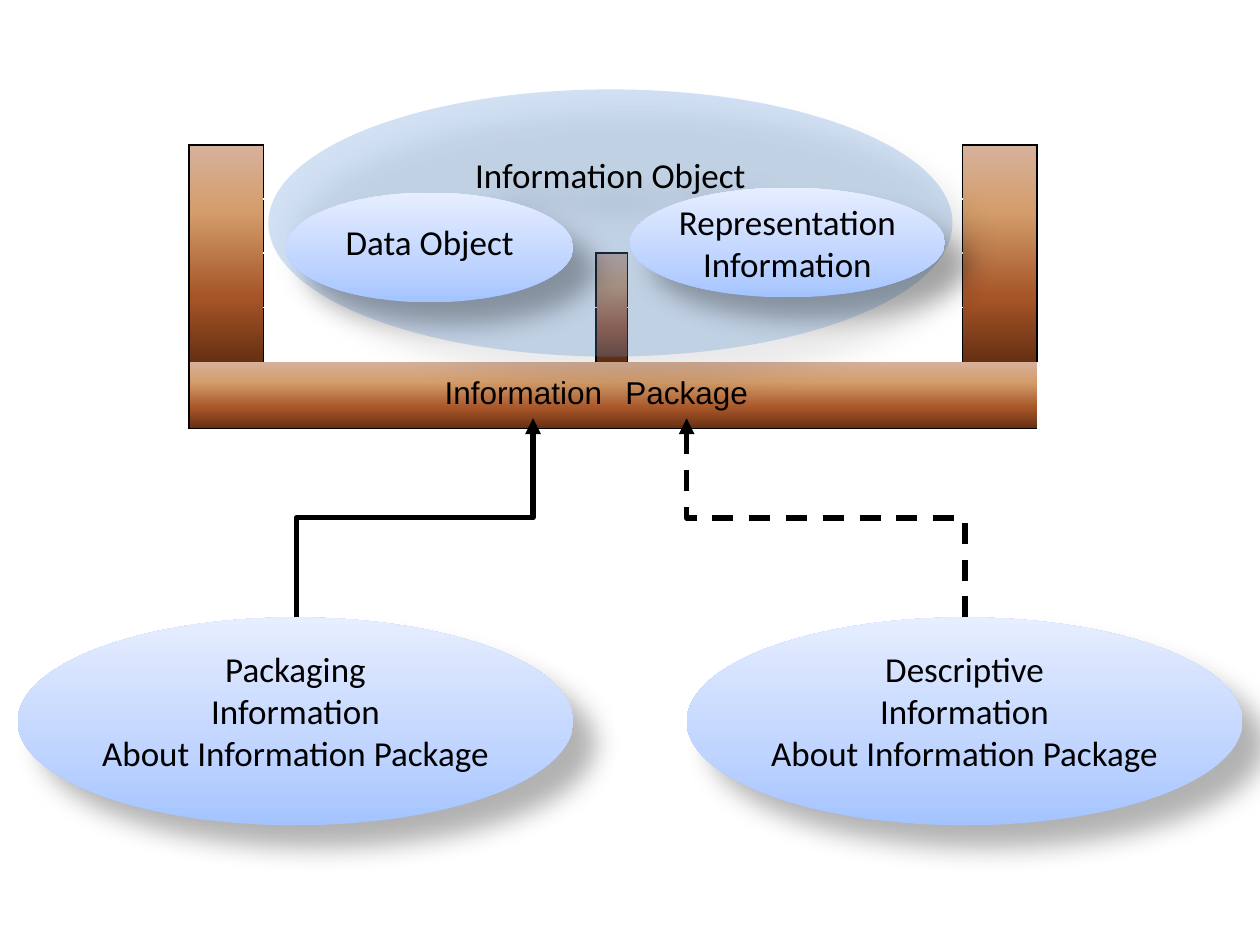
from lxml import etree
from pptx import Presentation
from pptx.dml.color import RGBColor
from pptx.enum.dml import MSO_LINE
from pptx.enum.shapes import MSO_CONNECTOR, MSO_SHAPE
from pptx.enum.text import MSO_ANCHOR, PP_ALIGN
from pptx.oxml.ns import qn
from pptx.util import Inches, Pt

CENTER, LEFT = PP_ALIGN.CENTER, PP_ALIGN.LEFT
TOP, MIDDLE = MSO_ANCHOR.TOP, MSO_ANCHOR.MIDDLE
OVAL, ELBOW, DASH = MSO_SHAPE.OVAL, MSO_CONNECTOR.ELBOW, MSO_LINE.DASH

BLACK = RGBColor(0x00, 0x00, 0x00)
WHITE = RGBColor(0xFF, 0xFF, 0xFF)
HAZE = RGBColor(0x55, 0x8E, 0xD5)
WOOD = [(0, RGBColor(0xD6, 0xB1, 0x9C)), (30, RGBColor(0xD4, 0x9E, 0x6C)),
        (70, RGBColor(0xA6, 0x55, 0x28)), (100, RGBColor(0x66, 0x30, 0x12))]
SKY = [(0, RGBColor(0xA4, 0xC4, 0xFF)), (35, RGBColor(0xBF, 0xD4, 0xFF)),
       (100, RGBColor(0xE6, 0xEE, 0xFF))]
NO_STYLE = "{2D5ABB26-0587-4C30-8999-92F81FD0307C}"

# Shelf: a grid whose wooden parts are (first row, first column, last row, last column)
SHELF_AT = (1.5, 1.15)
COLUMNS = [0.59, 1.31, 1.33, 0.25, 1.28, 1.38, 0.59]
ROWS = [0.43] * 4 + [0.53]
BASE_ROW = len(ROWS) - 1
WOODEN_PARTS = [(0, 0, 3, 0), (0, 6, 3, 6), (2, 3, 3, 3), (BASE_ROW, 0, BASE_ROW, 6)]
SIDES = {"a:lnL": (0, -1), "a:lnR": (0, 1), "a:lnT": (-1, 0), "a:lnB": (1, 0)}

# lines, (left, top, width, height), anchor, top inset, bottom inset
OUTER = (["Information Object"], (2.13, 0.71, 5.43, 2.12), TOP, 0.2, 0)
ABOUT = ["Information", "About Information Package"]
BUBBLES = [
    (["Data Object"], (2.27, 1.53, 2.28, 0.87), MIDDLE, 0, 0.1),
    (["Representation", "Information"], (5, 1.49, 2.5, 0.87), MIDDLE, 0, 0),
    (["Descriptive"] + ABOUT, (5.45, 4.9, 4.41, 1.65), TOP, 0, 0),
    (["Packaging"] + ABOUT, (0.14, 4.9, 4.41, 1.65), TOP, 0, 0),
]
SHELF_LABELS = [("Information", (3.43, 2.91, 1.59, 0.4), LEFT),
                ("Package", (4.72, 2.91, 1.46, 0.4), CENTER)]
# start, end, dash
ARROWS = [((2.35, 4.9), (4.23, 3.32), None), ((7.66, 4.9), (5.45, 3.32), DASH)]


def add_node(parent, tag, **attributes):
    node = etree.SubElement(parent, qn(tag))
    for name, value in attributes.items():
        node.set(name, str(value))
    return node


def add_color(parent, color, opacity=100):
    node = add_node(parent, "a:srgbClr", val=color)
    if opacity < 100:
        add_node(node, "a:alpha", val=opacity * 1000)


def paint_gradient(fill, element, stops, angle):
    fill.gradient()
    gradient = element.find(".//" + qn("a:gradFill"))
    for child in list(gradient):
        gradient.remove(child)
    stop_list = add_node(gradient, "a:gsLst")
    for position, color in stops:
        add_color(add_node(stop_list, "a:gs", pos=position * 1000), color)
    add_node(gradient, "a:lin", ang=angle * 60000, scaled=0)


def write(frame, lines, size, font, align):
    frame.text = "\n".join(lines)
    for para in frame.paragraphs:
        para.alignment = align
        para.font.size = Pt(size)
        for span in para.runs:
            span.font.size, span.font.name = Pt(size), font
            span.font.color.rgb = BLACK


def add_shelf(slide):
    row_count, column_count = len(ROWS), len(COLUMNS)
    frame = slide.shapes.add_table(row_count, column_count, *map(Inches, SHELF_AT),
                                   Inches(sum(COLUMNS)), Inches(sum(ROWS)))
    table = frame.table
    table.first_row = table.horz_banding = False
    frame.element.find(".//" + qn("a:tableStyleId")).text = NO_STYLE
    for column, width in zip(table.columns, COLUMNS):
        column.width = Inches(width)
    for row, height in zip(table.rows, ROWS):
        row.height = Inches(height)

    wooden = {(row, column) for top, left, bottom, right in WOODEN_PARTS
              for row in range(top, bottom + 1) for column in range(left, right + 1)}
    for row in range(row_count):
        for column in range(column_count):
            cell = table.cell(row, column)
            properties = cell._tc.get_or_add_tcPr()
            is_wood = (row, column) in wooden
            for side, (down, across) in SIDES.items():
                beside_wood = (row + down, column + across) in wooden
                edge = add_node(properties, side, w=Pt(1))
                if is_wood and (beside_wood or (row == BASE_ROW and side == "a:lnT")):
                    add_node(edge, "a:noFill")
                else:
                    color = BLACK if is_wood or beside_wood else WHITE
                    add_color(add_node(edge, "a:solidFill"), color)
            if is_wood:
                paint_gradient(cell.fill, properties, WOOD, 90)
            else:
                cell.fill.background()
    for top, left, bottom, right in WOODEN_PARTS:
        table.cell(top, left).merge(table.cell(bottom, right))


def add_bubble(slide, lines, place, anchor, inset_top, inset_bottom):
    bubble = slide.shapes.add_shape(OVAL, *map(Inches, place))
    bubble.line.fill.background()
    bubble.shadow.inherit = False
    effects = bubble.element.spPr.find(qn("a:effectLst"))
    shadow = add_node(effects, "a:outerShdw", blurRad=Pt(15), dist=Pt(18),
                      dir=45 * 60000, algn="tl", rotWithShape=0)
    add_color(shadow, BLACK, 30)
    frame = bubble.text_frame
    frame.word_wrap = True
    frame.vertical_anchor = anchor
    frame.margin_left = frame.margin_right = 0
    frame.margin_top, frame.margin_bottom = Inches(inset_top), Inches(inset_bottom)
    write(frame, lines, 20, "Calibri", CENTER)
    return bubble


def add_rising_arrow(slide, start, end, dash):
    """Elbow arrow that leaves upwards: a level elbow turned by 90 degrees."""
    middle_x, middle_y = (start[0] + end[0]) / 2, (start[1] + end[1]) / 2
    half_run, half_rise = (end[0] - start[0]) / 2, (start[1] - end[1]) / 2
    arrow = slide.shapes.add_connector(
        ELBOW, Inches(middle_x + half_rise), Inches(middle_y + half_run),
        Inches(middle_x - half_rise), Inches(middle_y - half_run))
    properties = arrow.element.spPr
    properties.find(qn("a:xfrm")).set("rot", str(90 * 60000))
    arrow.line.color.rgb = BLACK
    arrow.line.width = Pt(3)
    if dash:
        arrow.line.dash_style = dash
    add_node(properties.find(qn("a:ln")), "a:tailEnd", type="triangle")
    add_node(properties, "a:effectLst")


def main():
    deck = Presentation()
    deck.slide_width, deck.slide_height = Inches(10), Inches(7.5)
    slide = deck.slides.add_slide(deck.slide_layouts[6])

    add_shelf(slide)
    outer = add_bubble(slide, *OUTER)
    outer.fill.solid()
    outer.fill.fore_color.rgb = HAZE
    add_node(outer.element.spPr.find(".//" + qn("a:srgbClr")), "a:alpha", val=27000)
    for details in BUBBLES:
        bubble = add_bubble(slide, *details)
        paint_gradient(bubble.fill, bubble.element.spPr, SKY, 270)
    for details in ARROWS:
        add_rising_arrow(slide, *details)
    for text, place, align in SHELF_LABELS:
        box = slide.shapes.add_textbox(*map(Inches, place))
        box.text_frame.word_wrap = True
        write(box.text_frame, [text], 18, "Arial", align)

    deck.save("out.pptx")


if __name__ == "__main__":
    main()
